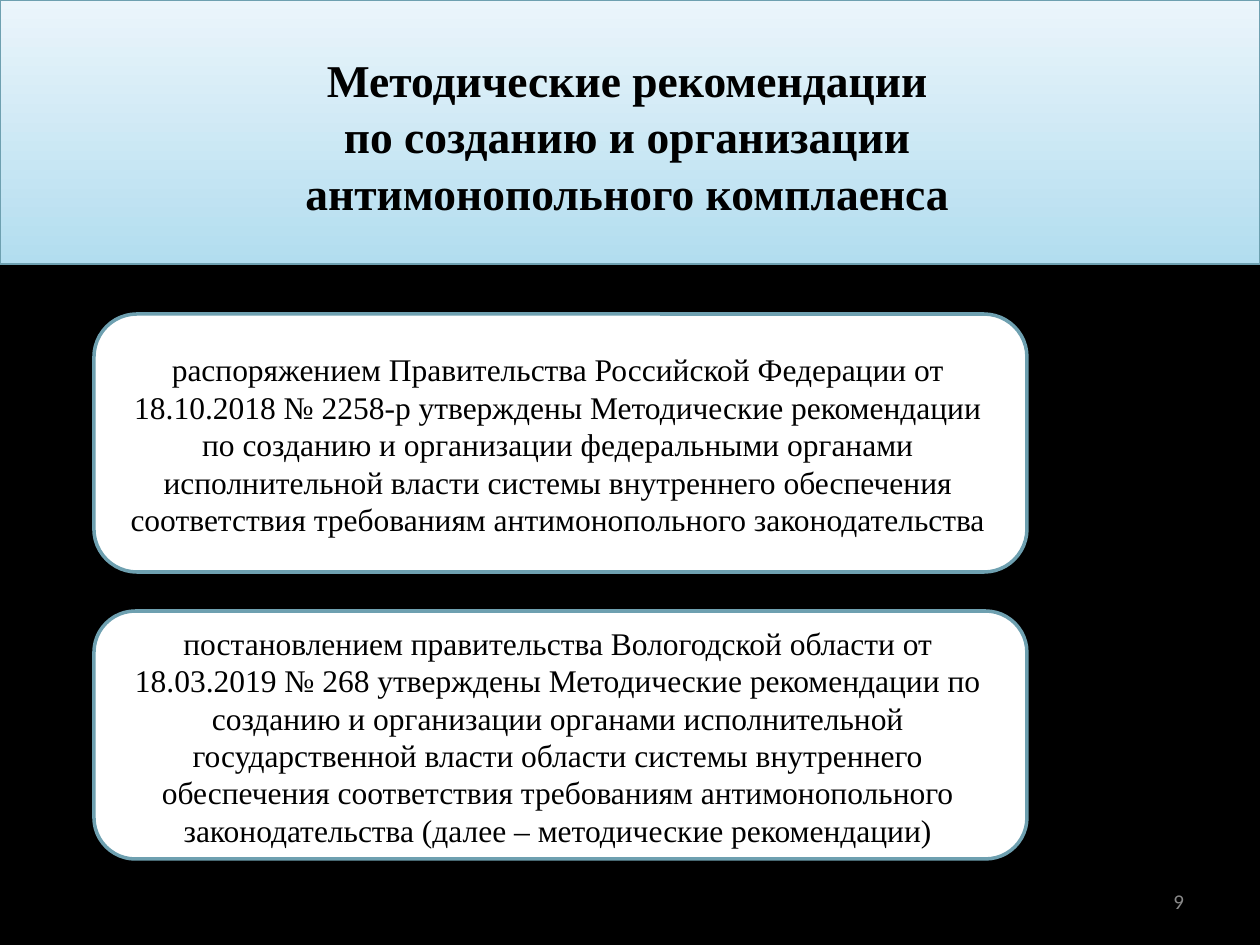
from pptx import Presentation
from pptx.dml.color import RGBColor
from pptx.enum.shapes import MSO_SHAPE
from pptx.enum.text import MSO_ANCHOR, MSO_AUTO_SIZE, PP_ALIGN
from pptx.util import Pt

SCALE = 914400 / 126  # EMU per px
COLORS = {
    "background": "000000",
    "text": "000000",
    "card": "FFFFFF",
    "border": "6EA0B0",
    "banner top": "EBF5FB",
    "banner bottom": "B2DDEF",
    "number": "898989",
}


def px(length):
    return round(length * SCALE)


def format_text(shape, size, color, font="Times New Roman", bold=False,
                align=PP_ALIGN.CENTER, insets=(15, 15, 20, 10)):
    frame = shape.text_frame
    frame.word_wrap = True
    frame.auto_size = MSO_AUTO_SIZE.NONE
    frame.vertical_anchor = MSO_ANCHOR.MIDDLE
    frame.margin_left, frame.margin_top, frame.margin_right, frame.margin_bottom = map(px, insets)
    paragraph = frame.paragraphs[0]
    paragraph.alignment = align
    for span in paragraph.runs:
        span.font.name = font
        span.font.size = Pt(size)
        span.font.bold = bold
        span.font.color.rgb = RGBColor.from_string(COLORS[color])
    return paragraph


deck = Presentation()
deck.slide_width, deck.slide_height = px(1260), px(945)
page = deck.slides.add_slide(deck.slide_layouts[5])
page.background.fill.solid()
page.background.fill.fore_color.rgb = RGBColor.from_string(COLORS["background"])

# Title banner
title = page.shapes.title
title.left, title.top, title.width, title.height = 0, 0, px(1260), px(264)
title.fill.gradient()
title.fill.gradient_angle = 270
for stop, name in zip(title.fill.gradient_stops, ("banner top", "banner bottom")):
    stop.color.rgb = RGBColor.from_string(COLORS[name])
title.line.color.rgb = RGBColor.from_string(COLORS["border"])
title.line.width = Pt(0.75)
title.text_frame.paragraphs[0].text = (
    "Методические рекомендации\n"
    "по созданию и организации\n"
    "антимонопольного комплаенса"
)
format_text(title, 26, "text", bold=True).line_spacing = 1.04

# Cards with the approving acts
cards = [
    (314, 258,
     "распоряжением Правительства Российской Федерации от 18.10.2018 № 2258-р "
     "утверждены Методические рекомендации по созданию и организации федеральными "
     "органами исполнительной власти системы внутреннего обеспечения соответствия "
     "требованиям антимонопольного законодательства"),
    (611, 248,
     "постановлением правительства Вологодской области от 18.03.2019 № 268 "
     "утверждены Методические рекомендации по созданию и организации органами "
     "исполнительной государственной власти области системы внутреннего обеспечения "
     "соответствия требованиям антимонопольного законодательства "
     "(далее – методические рекомендации)"),
]
for top, height, text in cards:
    card = page.shapes.add_shape(MSO_SHAPE.ROUNDED_RECTANGLE, px(94), px(top), px(933), px(height))
    card.shadow.inherit = False
    card.fill.solid()
    card.fill.fore_color.rgb = RGBColor.from_string(COLORS["card"])
    card.line.color.rgb = RGBColor.from_string(COLORS["border"])
    card.line.width = Pt(2)
    card.text_frame.text = text
    paragraph = format_text(card, 18, "text")
    paragraph.line_spacing = 0.99
    paragraph.space_after = Pt(8)

# Slide number
number = page.shapes.add_textbox(px(903), px(876), px(294), px(50))
number.text_frame.text = "9"
format_text(number, 12, "number", font="Calibri", align=PP_ALIGN.RIGHT, insets=(13, 6, 13, 6))

deck.save("out.pptx")
